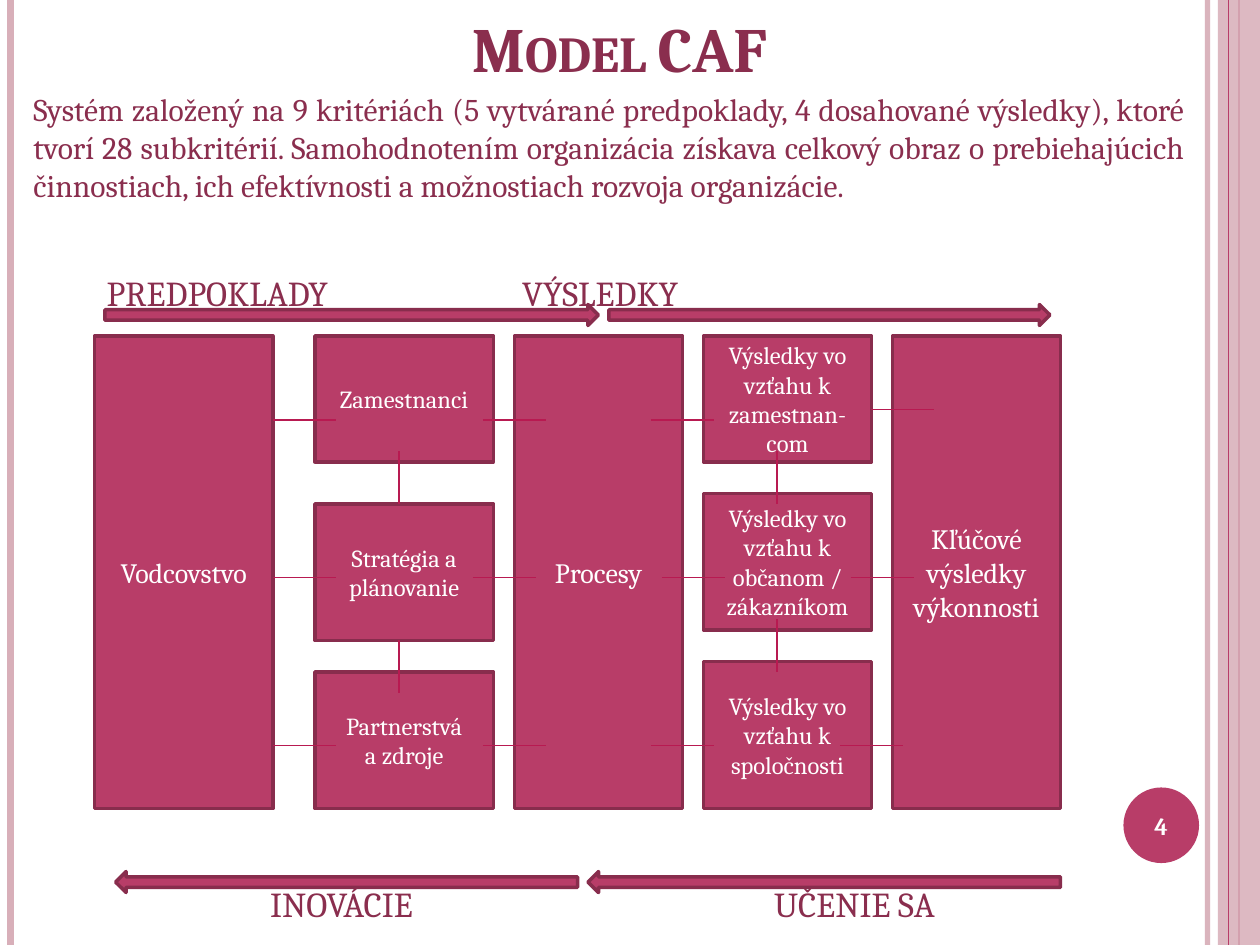
"""Builds the CAF model slide with its criteria diagram."""
from lxml.etree import SubElement
from pptx import Presentation
from pptx.dml.color import RGBColor
from pptx.enum.shapes import MSO_CONNECTOR, MSO_SHAPE
from pptx.enum.text import MSO_ANCHOR, PP_ALIGN
from pptx.oxml.ns import qn
from pptx.util import Pt

FONT = "Cambria"
COLORS = {
    "fill": "B83D68", "border": "882D4D", "link": "B81A51",
    "pale": "D8AFB9", "text": "8A2E4E", "white": "FFFFFF",
}
INTRO = (
    "Systém založený na 9 kritériách (5 vytvárané predpoklady, 4 dosahované výsledky), "
    "ktoré tvorí 28 subkritérií. Samohodnotením organizácia získava celkový obraz o "
    "prebiehajúcich činnostiach, ich efektívnosti a možnostiach rozvoja organizácie."
)
TOP = 192
COLUMNS = [
    (54, 102, 16, [(TOP, 270, "Vodcovstvo")]),
    (180, 102, 14, [(TOP, 72, "Zamestnanci"), (288, 78, "Stratégia a plánovanie"),
                    (384, 78, "Partnerstvá\na zdroje")]),
    (294, 96, 16, [(TOP, 270, "Procesy")]),
    (402, 96, 14, [(TOP, 72, "Výsledky vo vzťahu k zamestnan-\ncom"),
                   (282, 78, "Výsledky vo vzťahu k občanom / zákazníkom"),
                   (378, 84, "Výsledky vo vzťahu k spoločnosti")]),
    (510, 96, 16, [(TOP, 270, "Kľúčové výsledky výkonnosti")]),
]
LINK_ROWS = {240: [156, 276, 372], 330: [156, 270, 378, 486],
             426: [156, 276, 372, 480], 234: [498]}
LINK_COLUMNS = {228: [258, 366], 444: [258, 354]}
ARROWS = [(60, 174, 282, 0), (348, 174, 252, 0), (336, 498, 270, 180), (66, 498, 264, 180)]
LABELS = [("PREDPOKLADY", 61, 155), ("VÝSLEDKY", 298.5, 155),
          ("INOVÁCIE", 154.5, 504.5), ("UČENIE SA", 442.5, 504.5)]


def rgb(name):
    """Return the named palette colour."""
    return RGBColor.from_string(COLORS[name])


def set_alpha(fill_parent, percent):
    """Make the solid colour inside an element partly transparent."""
    color = next(fill_parent.iter(qn("a:srgbClr")))
    SubElement(color, qn("a:alpha")).set("val", str(percent * 1000))


def write(tf, text, size, color, align=PP_ALIGN.LEFT, bold=False, anchor=MSO_ANCHOR.MIDDLE):
    """Fill a text frame with evenly formatted paragraphs."""
    tf.word_wrap = True
    tf.vertical_anchor = anchor
    tf.text = text
    for p in tf.paragraphs:
        p.alignment = align
        p.font.name, p.font.size, p.font.bold = FONT, Pt(size), bold
        p.font.color.rgb = rgb(color)


def add_shape(slide, kind, x, y, w, h, fill="fill", border=None):
    """Add a flat preset shape."""
    sp = slide.shapes.add_shape(kind, Pt(x), Pt(y), Pt(w), Pt(h))
    sp.shadow.inherit = False
    sp.fill.solid()
    sp.fill.fore_color.rgb = rgb(fill)
    if border:
        sp.line.color.rgb = rgb(border)
        sp.line.width = Pt(2)
    else:
        sp.line.fill.background()
    return sp


def add_line(slide, x1, y1, x2, y2, color="link", width=1):
    """Add a straight line without a shadow."""
    line = slide.shapes.add_connector(MSO_CONNECTOR.STRAIGHT, Pt(x1), Pt(y1), Pt(x2), Pt(y2))
    line.line.color.rgb = rgb(color)
    line.line.width = Pt(width)
    SubElement(line._element.spPr, qn("a:effectLst"))
    return line


def add_text(slide, text, x, y, w, h, size, **style):
    """Add a wrapped text box."""
    tb = slide.shapes.add_textbox(Pt(x), Pt(y), Pt(w), Pt(h))
    write(tb.text_frame, text, size, "text", **style)


def add_frame(slide):
    """Add the stripes along both slide edges."""
    inner = add_line(slide, 690, 0, 690, 540, "pale", 3)
    set_alpha(inner._element.spPr, 93)
    add_line(slide, 6, 0, 6, 540, "pale", 4.5)
    add_line(slide, 708, 0, 708, 540, "fill", 1.5)
    band = add_shape(slide, MSO_SHAPE.RECTANGLE, 696, 0, 24, 540, "pale")
    set_alpha(band._element.spPr, 87)
    add_line(slide, 702, 0, 702, 540, "fill", 0.75)


def add_title(slide, text):
    """Place and format the title placeholder in small capitals."""
    sp = slide.shapes.title
    sp.left, sp.top, sp.width, sp.height = Pt(60), Pt(0), Pt(588), Pt(52)
    write(sp.text_frame, text, 36, "text", PP_ALIGN.CENTER, True, MSO_ANCHOR.BOTTOM)
    p = sp.text_frame.paragraphs[0]
    p._p.pPr.find(qn("a:defRPr")).set("cap", "small")


def add_page_number(slide, number):
    """Add the round page number badge."""
    sp = add_shape(slide, MSO_SHAPE.OVAL, 642, 450, 43.2, 43.2)
    write(sp.text_frame, number, 14, "white", PP_ALIGN.CENTER, True)


def add_diagram(slide):
    """Add the criteria boxes, their links and the direction arrows."""
    for text, x, y in LABELS:
        add_text(slide, text, x - 7.2, y, 170, 24, 20)
    for x, w, size, boxes in COLUMNS:
        for y, h, text in boxes:
            sp = add_shape(slide, MSO_SHAPE.RECTANGLE, x, y, w, h, border="border")
            write(sp.text_frame, text, size, "white", PP_ALIGN.CENTER)
    for y, starts in LINK_ROWS.items():
        for x in starts:
            add_line(slide, x, y, x + 36, y)
    for x, starts in LINK_COLUMNS.items():
        for y in starts:
            add_line(slide, x, y, x, y + 30)
    for x, y, w, angle in ARROWS:
        sp = add_shape(slide, MSO_SHAPE.RIGHT_ARROW, x, y, w, 12, border="border")
        sp.rotation = angle


def main():
    """Build and save the slide."""
    prs = Presentation()
    prs.slide_width, prs.slide_height = Pt(720), Pt(540)
    slide = prs.slides.add_slide(prs.slide_layouts[5])
    add_frame(slide)
    add_title(slide, "Model CAF")
    add_diagram(slide)
    add_page_number(slide, "4")
    add_text(slide, INTRO, 12, 48, 672, 94, 18, align=PP_ALIGN.JUSTIFY, anchor=MSO_ANCHOR.TOP)
    prs.save("out.pptx")


if __name__ == "__main__":
    main()
